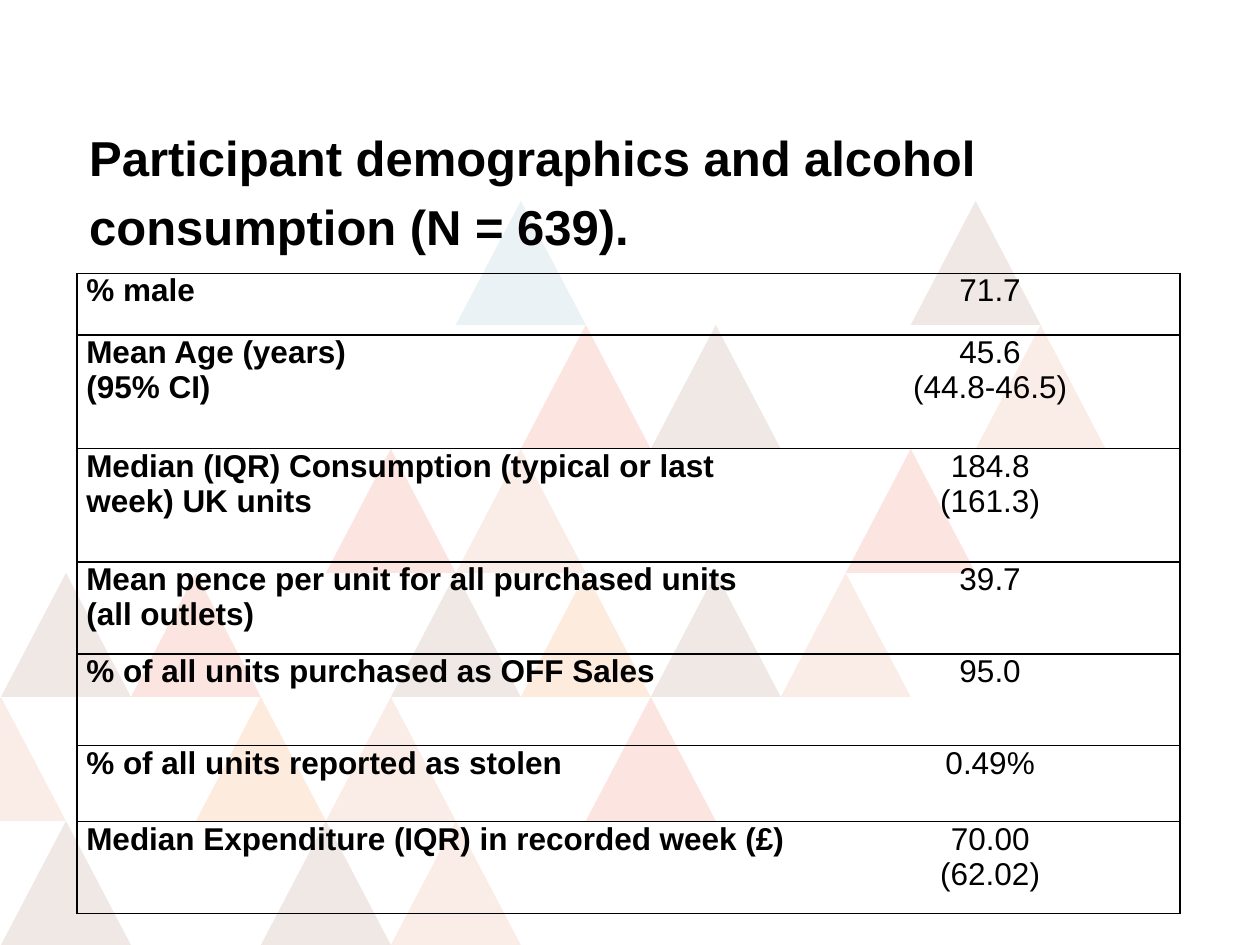
from lxml.etree import SubElement
from pptx import Presentation
from pptx.dml.color import RGBColor
from pptx.enum.text import MSO_ANCHOR, PP_ALIGN
from pptx.oxml.ns import qn
from pptx.util import Cm, Pt

TITLE = "Participant demographics and alcohol consumption (N = 639)."

# Row height in cm, label lines, value lines
ROWS = [
    (1.24, ["% male"], ["71.7"]),
    (2.29, ["Mean Age (years)", "(95% CI)"], ["45.6", "(44.8-46.5)"]),
    (2.29, ["Median (IQR) Consumption (typical or last week) UK units"],
     ["184.8", "(161.3)"]),
    (1.85, ["Mean pence per unit for all purchased units (all outlets)"], ["39.7"]),
    (1.85, ["% of all units purchased as OFF Sales"], ["95.0"]),
    (1.53, ["% of all units reported as stolen"], ["0.49%"]),
    (1.85, ["Median Expenditure (IQR) in recorded week (£)"], ["70.00", "(62.02)"]),
]
COLUMN_WIDTHS = (14.58, 7.66)

# Triangle tints: colour and opacity in percent
TINTS = {
    "blue": ("3B88A5", 10),
    "brown": ("6A2100", 10),
    "rust": ("D54A19", 10),
    "coral": ("EF613F", 16),
    "amber": ("F37F21", 15),
}
# Each band of triangles, from the top: half-step across and tint
TRIANGLES = [
    [(7, "blue"), (14, "brown")],
    [(8, "coral"), (10, "brown"), (15, "rust")],
    [(5, "coral"), (7, "rust"), (13, "coral")],
    [(0, "brown"), (2, "coral"), (6, "brown"), (8, "amber"), (10, "brown"), (12, "rust")],
    [(-1, "rust"), (3, "amber"), (5, "rust"), (9, "coral")],
    [(0, "brown"), (4, "brown"), (6, "rust")],
]
HALF_STEP, BAND_HEIGHT, FIRST_BAND = 1.31, 2.5, 4.05


def colour(value):
    return RGBColor.from_string(value)


def write(frame, lines, size=18, bold=False, align=PP_ALIGN.LEFT, spacing=1.0):
    frame.word_wrap = True
    for number, line in enumerate(lines):
        para = frame.paragraphs[0] if number == 0 else frame.add_paragraph()
        para.alignment, para.line_spacing = align, spacing
        span = para.add_run()
        span.text = line
        span.font.name, span.font.size, span.font.bold = "Arial", Pt(size), bold
        span.font.color.rgb = colour("000000")


def add_triangle(page, left, top, tint):
    value, opacity = TINTS[tint]
    builder = page.shapes.build_freeform(Cm(left + HALF_STEP), Cm(top))
    bottom = Cm(top + BAND_HEIGHT)
    builder.add_line_segments([(Cm(left + 2 * HALF_STEP), bottom), (Cm(left), bottom)])
    shape = builder.convert_to_shape()
    shape.shadow.inherit = False
    shape.line.fill.background()
    shape.fill.solid()
    shape.fill.fore_color.rgb = colour(value)
    tone = shape.fill._xPr.find(qn("a:solidFill"))[0]
    SubElement(tone, qn("a:alpha"), val=str(opacity * 1000))


def set_borders(cell, sides):
    """Draw black lines on the given sides and clear the others."""
    properties = cell._tc.get_or_add_tcPr()
    for side in "LRTB":
        line = SubElement(properties, qn(f"a:ln{side}"), w=str(Pt(1)))
        if side in sides:
            fill = SubElement(line, qn("a:solidFill"))
            SubElement(fill, qn("a:srgbClr"), val="000000")
        else:
            SubElement(line, qn("a:noFill"))


def main():
    deck = Presentation()
    deck.slide_width, deck.slide_height = Cm(25.4), Cm(19.05)
    page = deck.slides.add_slide(deck.slide_layouts[6])

    # Background triangles
    for band, triangles in enumerate(TRIANGLES):
        for step, tint in triangles:
            add_triangle(page, 0.02 + step * HALF_STEP,
                         FIRST_BAND + band * BAND_HEIGHT, tint)

    # Title
    box = page.shapes.add_textbox(Cm(1.55), Cm(2.8), Cm(19.96), Cm(1.93))
    box.text_frame.vertical_anchor = MSO_ANCHOR.MIDDLE
    write(box.text_frame, [TITLE], size=28, bold=True, spacing=1.17)

    # Demographics table
    table = page.shapes.add_table(
        len(ROWS), 2, Cm(1.55), Cm(5.51), Cm(sum(COLUMN_WIDTHS)),
        Cm(sum(row[0] for row in ROWS))).table
    table.first_row = table.horz_banding = False
    for column, width in zip(table.columns, COLUMN_WIDTHS):
        column.width = Cm(width)
    for row, (height, label, value) in zip(table.rows, ROWS):
        row.height = Cm(height)
        formats = [(label, True, PP_ALIGN.LEFT, "LTB"),
                   (value, False, PP_ALIGN.CENTER, "RTB")]
        for cell, (lines, bold, align, sides) in zip(row.cells, formats):
            cell.margin_left = cell.margin_right = Cm(0.19)
            cell.margin_top = cell.margin_bottom = 0
            set_borders(cell, sides)
            cell.fill.background()
            write(cell.text_frame, lines, bold=bold, align=align)

    deck.save("out.pptx")


if __name__ == "__main__":
    main()
